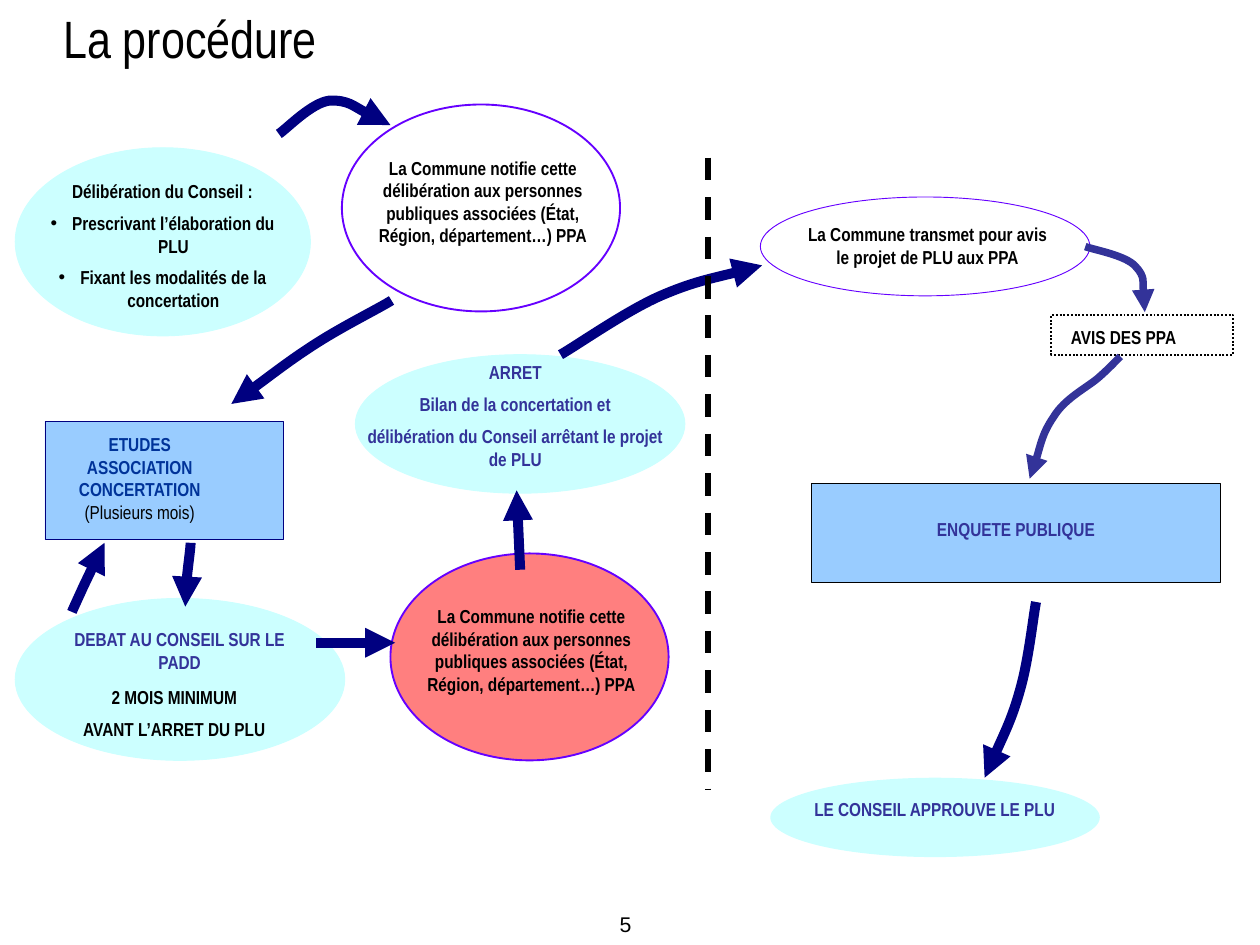
from pptx import Presentation, util as u
from pptx.dml.color import RGBColor
from pptx.enum import dml, shapes, text
from pptx.oxml import ns, xmlchemy

BLACK = RGBColor(0x00, 0x00, 0x00)
NAVY = RGBColor(0x00, 0x00, 0x80)
INDIGO = RGBColor(0x33, 0x33, 0x99)
BLUE = RGBColor(0x00, 0x33, 0x99)
VIOLET = RGBColor(0x66, 0x00, 0xFF)
AQUA = RGBColor(0xCC, 0xFF, 0xFF)
SKY = RGBColor(0x99, 0xCC, 0xFF)
RED = RGBColor(0xFF, 0x00, 0x00)

ELLIPSE = shapes.MSO_SHAPE.OVAL
RECTANGLE = shapes.MSO_SHAPE.RECTANGLE
NOTICE = ("La Commune notifie cette délibération aux personnes publiques "
          "associées (État, Région, département…) PPA")


def lengths(values):
    return [u.Cm(value) for value in values]


def child(parent, tag, **attributes):
    element = xmlchemy.OxmlElement(tag)
    for name, value in attributes.items():
        element.set(name, value)
    parent.append(element)
    return element


class Flowchart:
    font = "Arial Narrow"
    size = 15
    gap = 7.5
    indent = u.Cm(0.61)

    def __init__(self, page):
        self.page = page

    def span(self, para, words, color, bold=True, size=size, font=font):
        span = para.add_run()
        span.text = words
        span.font.name = font
        span.font.size = u.Pt(size)
        span.font.bold = bold
        span.font.color.rgb = color

    def pad(self, frame):
        frame.margin_left = frame.margin_right = u.Cm(0.36)
        frame.margin_top = frame.margin_bottom = u.Cm(0.18)
        frame.word_wrap = True

    def title(self, place, words):
        box = self.page.shapes.title
        box.left, box.top, box.width, box.height = lengths(place)
        frame = box.text_frame
        self.pad(frame)
        frame.auto_size = text.MSO_AUTO_SIZE.NONE
        frame.vertical_anchor = text.MSO_ANCHOR.MIDDLE
        para = frame.paragraphs[0]
        para.alignment = text.PP_ALIGN.LEFT
        self.span(para, words, BLACK, False, 42)

    def shape(self, kind, place, fill=None, line=None, width=0.75, dash=None, alpha=None):
        box = self.page.shapes.add_shape(kind, *lengths(place))
        box.shadow.inherit = False
        if fill is None:
            box.fill.background()
        else:
            box.fill.solid()
            box.fill.fore_color.rgb = fill
        if alpha:
            color = next(box.element.iter(ns.qn("a:srgbClr")))
            child(color, "a:alpha", val=str(alpha * 1000))
        if line is None:
            box.line.fill.background()
        else:
            box.line.color.rgb = line
            box.line.width = u.Pt(width)
            box.line.dash_style = dash

    def label(self, place, lines, color=BLACK, gap=gap, bullets=False, **style):
        frame = self.page.shapes.add_textbox(*lengths(place)).text_frame
        self.pad(frame)
        for index, words in enumerate(lines):
            para = frame.add_paragraph() if index else frame.paragraphs[0]
            para.alignment = text.PP_ALIGN.CENTER
            if index:
                para.space_before = u.Pt(gap)
                if bullets:
                    self.bullet(para)
            self.span(para, words, color, **style)
        return frame

    def bullet(self, para):
        properties = para._p.get_or_add_pPr()
        properties.set("marL", str(self.indent))
        properties.set("indent", str(-self.indent))
        child(properties, "a:buFont", typeface="Arial")
        child(properties, "a:buChar", char="•")

    def stroke(self, item, color, width, arrow=True):
        item.line.color.rgb = color
        item.line.width = u.Pt(width)
        if arrow:
            child(item.get_or_add_ln(), "a:tailEnd", type="triangle")

    def curve(self, points, color=NAVY, width=8):
        start, *rest = [lengths(point) for point in points]
        builder = self.page.shapes.build_freeform(*start)
        builder.add_line_segments(rest, close=False)
        item = builder.convert_to_shape()
        item.shadow.inherit = False
        item.fill.background()
        outline = next(item.element.iter(ns.qn("a:path")))
        segments = outline.findall(ns.qn("a:lnTo"))
        for index, segment in enumerate(segments):
            if index % 3 == 0:
                bezier = child(outline, "a:cubicBezTo")
            bezier.append(segment[0])
            outline.remove(segment)
        self.stroke(item, color, width)

    def straight(self, start, end, color=NAVY, width=8, dash=None, arrow=True):
        item = self.page.shapes.add_connector(
            shapes.MSO_CONNECTOR.STRAIGHT, *lengths(start + end))
        item.line.dash_style = dash
        self.stroke(item, color, width, arrow)
        child(item.element.spPr, "a:effectLst")


deck = Presentation()
deck.slide_width, deck.slide_height = u.Cm(35.56), u.Cm(26.67)
chart = Flowchart(deck.slides.add_slide(deck.slide_layouts[5]))
chart.title((1.42, -1.04, 30.23, 4.19), "La procédure")

chart.shape(ELLIPSE, (0.43, 4.17, 8.33, 5.31), AQUA, AQUA)
chart.label((0.74, 4.9, 7.7, 3.63), [
    "Délibération du Conseil :",
    "Prescrivant l’élaboration du PLU",
    "Fixant les modalités de la concertation",
], bullets=True)

chart.shape(ELLIPSE, (21.46, 5.56, 9.3, 2.79), line=VIOLET)
chart.label((22.33, 6.12, 7.7, 1.65),
            ["La Commune transmet pour avis le projet de PLU aux PPA"])

chart.shape(ELLIPSE, (9.65, 2.95, 7.85, 5.84), line=VIOLET, width=1.5)
chart.label((9.78, 4.24, 7.7, 2.92), [NOTICE])

chart.shape(RECTANGLE, (1.27, 11.89, 6.73, 3.35), SKY, NAVY)
studies = chart.label((1.85, 12.04, 4.19, 2.92),
                      ["ETUDES", "ASSOCIATION", "CONCERTATION"], BLUE, gap=0)
duration = studies.add_paragraph()
duration.alignment = text.PP_ALIGN.CENTER
chart.span(duration, "(Plusieurs mois)", BLACK, bold=False)

chart.shape(ELLIPSE, (21.74, 21.95, 9.3, 2.24), AQUA)
chart.label((22.53, 22.33, 7.7, 0.99), ["LE CONSEIL APPROUVE LE PLU"], INDIGO)

chart.shape(ELLIPSE, (10.03, 10.01, 9.3, 3.91), AQUA, AQUA)
chart.label((9.73, 10.01, 9.63, 3.56), [
    "ARRET",
    "Bilan de la concertation et",
    "délibération du Conseil arrêtant le projet de PLU",
], INDIGO)

chart.shape(RECTANGLE, (29.67, 8.89, 5.13, 1.12), line=BLACK, width=1.5,
            dash=dml.MSO_LINE.ROUND_DOT)
chart.label((27.86, 9.02, 7.7, 0.99), ["AVIS DES PPA"])

chart.shape(ELLIPSE, (0.43, 16.89, 9.3, 4.57), AQUA, AQUA)
chart.label((1.22, 17.55, 7.7, 1.65), ["DEBAT AU CONSEIL SUR LE PADD"], INDIGO)
chart.label((1.07, 19.18, 7.7, 1.96), ["2 MOIS MINIMUM", "AVANT L’ARRET DU PLU"])

chart.shape(RECTANGLE, (22.91, 13.64, 11.53, 2.79), SKY, BLACK)
chart.label((23.8, 14.43, 9.75, 0.99), ["ENQUETE PUBLIQUE"], INDIGO)

chart.shape(ELLIPSE, (11.02, 15.62, 7.85, 5.84), RED, VIOLET, 1.5, alpha=50)
chart.label((11.15, 16.89, 7.7, 2.92), [NOTICE])

chart.label((17.12, 25.53, 1.07, 1.09), ["5"], bold=False, size=17, font="Arial")

for points in (
    [(7.87, 3.78), (8.1, 3.63), (8.79, 2.9), (9.3, 2.84),
     (9.83, 2.82), (10.67, 3.4), (11.02, 3.53)],
    [(11.05, 8.48), (10.72, 8.69), (9.75, 9.17), (8.99, 9.65),
     (8.23, 10.13), (7.04, 11.05), (6.53, 11.4)],
    [(29.24, 16.99), (29.16, 17.4), (29.03, 18.62), (28.8, 19.43),
     (28.57, 20.27), (28.02, 21.41), (27.79, 21.95)],
    [(15.82, 10.01), (16.28, 9.75), (17.65, 8.79), (18.62, 8.36),
     (19.56, 7.95), (20.9, 7.67), (21.51, 7.49)],
    [(5.38, 15.32), (5.38, 15.47), (5.31, 15.95), (5.28, 16.26),
     (5.26, 16.56), (5.26, 16.94), (5.23, 17.12)],
    [(2.03, 17.27), (2.08, 17.15), (2.21, 16.87), (2.36, 16.54),
     (2.51, 16.23), (2.82, 15.57), (2.95, 15.32)],
):
    chart.curve(points)

for points in (
    [(30.63, 6.96), (30.91, 7.06), (31.78, 7.21), (32.05, 7.52),
     (32.33, 7.82), (32.26, 8.56), (32.31, 8.81)],
    [(31.62, 10.06), (31.52, 10.16), (31.29, 10.41), (30.99, 10.67),
     (30.66, 10.95), (30.05, 11.25), (29.74, 11.76),
     (29.41, 12.24), (29.21, 13.16), (29.06, 13.51)],
):
    chart.curve(points, INDIGO, 6)

chart.straight((8.92, 18.14), (11.15, 18.14))
chart.straight((14.68, 16.08), (14.58, 13.84))
chart.straight((19.99, 4.45), (19.99, 22.3), BLACK, 4.5, dml.MSO_LINE.DASH, arrow=False)

deck.save("out.pptx")
